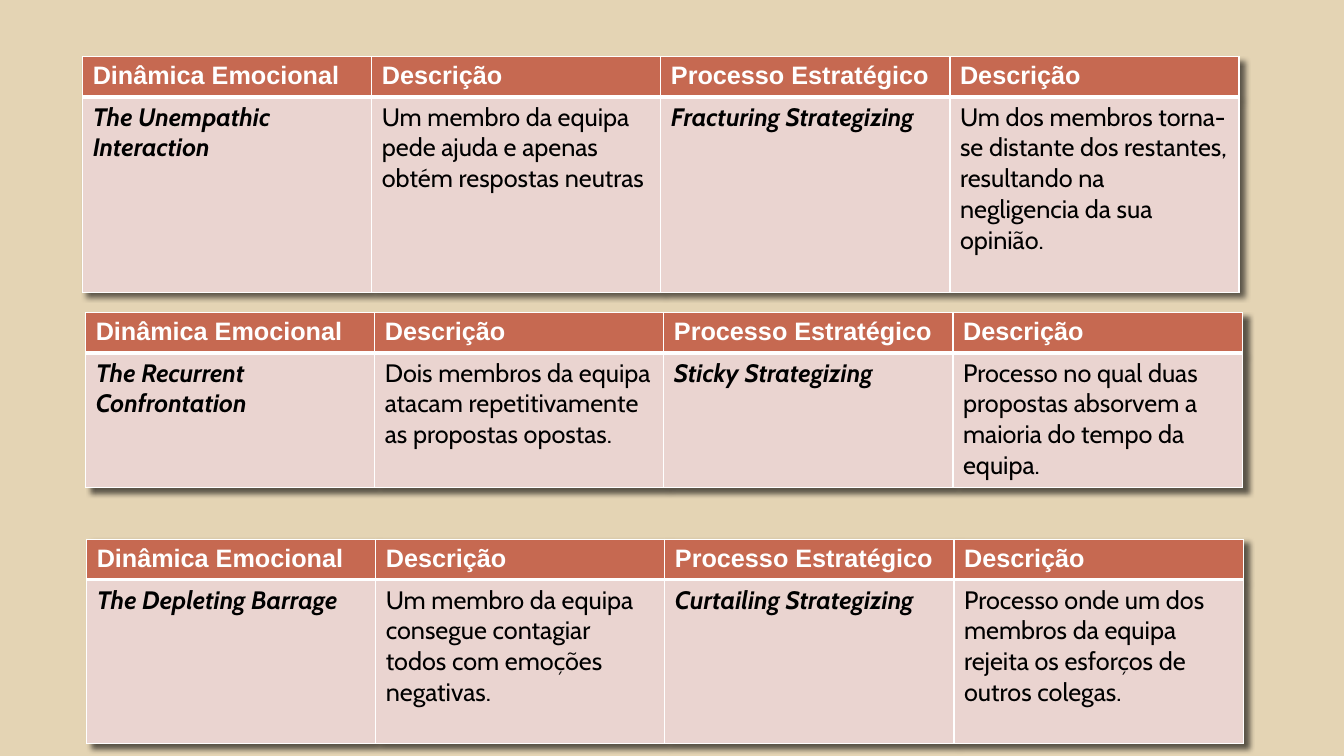
import pptx
import pptx.dml.color
import pptx.oxml
import pptx.oxml.ns
import pptx.util

Inches = pptx.util.Inches
Pt = pptx.util.Pt
RGBColor = pptx.dml.color.RGBColor

SAND = RGBColor(0xE4, 0xD4, 0xB4)
TERRACOTTA = RGBColor(0xC6, 0x69, 0x51)
BLUSH = RGBColor(0xEA, 0xD4, 0xD0)
WHITE = RGBColor(0xFF, 0xFF, 0xFF)
BLACK = RGBColor(0x00, 0x00, 0x00)

TABLE_WIDTH = 11.47
HEADER_HEIGHT = 0.4
THIN, THICK = 1, 3
NAMESPACE = pptx.oxml.ns.nsdecls("a")

HEADINGS = ["Dinâmica Emocional", "Descrição", "Processo Estratégico", "Descrição"]

# left, top, body height, body texts
DYNAMICS = [
    (0.86, 5.35, 1.63, [
        "The Depleting Barrage",
        "Um membro da equipa consegue contagiar todos com emoções negativas.",
        "Curtailing Strategizing",
        "Processo onde um dos membros da equipa rejeita os esforços de outros colegas.",
    ]),
    (0.85, 3.1, 1.34, [
        "The Recurrent Confrontation",
        "Dois membros da equipa atacam repetitivamente as propostas opostas.",
        "Sticky Strategizing",
        "Processo no qual duas propostas absorvem a maioria do tempo da equipa.",
    ]),
    (0.82, 0.56, 1.94, [
        "The Unempathic Interaction",
        "Um membro da equipa pede ajuda e apenas obtém respostas neutras",
        "Fracturing Strategizing",
        "Um dos membros torna-se distante dos restantes, resultando na "
        "negligencia da sua opinião.",
    ]),
]


def set_borders(cell, top, bottom):
    properties = cell._tc.get_or_add_tcPr()
    for side, width in (("L", THIN), ("R", THIN), ("T", top), ("B", bottom)):
        properties.append(pptx.oxml.parse_xml(
            f'<a:ln{side} {NAMESPACE} w="{Pt(width)}"><a:solidFill>'
            f'<a:srgbClr val="{WHITE}"/></a:solidFill></a:ln{side}>'))


def add_shadow(table):
    table._tbl.tblPr.insert(0, pptx.oxml.parse_xml(
        f'<a:effectLst {NAMESPACE}><a:outerShdw blurRad="{Pt(4)}" dist="{Pt(4)}" '
        'dir="2700000" algn="tl" rotWithShape="0"><a:srgbClr val="000000">'
        '<a:alpha val="60000"/></a:srgbClr></a:outerShdw></a:effectLst>'))


def fill_cell(cell, text, fill, font_name, color, bold, italic):
    cell.fill.solid()
    cell.fill.fore_color.rgb = fill
    cell.text_frame.text = text
    font = cell.text_frame.paragraphs[0].runs[0].font
    font.name = font_name
    font.size = Pt(18)
    font.color.rgb = color
    font.bold = bold
    font.italic = italic


def add_dynamic_table(slide, left, top, body_height, texts):
    """Add one emotional dynamic: a heading row above a row of names and descriptions."""
    frame = slide.shapes.add_table(
        2, len(HEADINGS), Inches(left), Inches(top),
        Inches(TABLE_WIDTH), Inches(HEADER_HEIGHT + body_height))
    table = frame.table
    table.horz_banding = False
    table.rows[0].height = Inches(HEADER_HEIGHT)
    table.rows[1].height = Inches(body_height)
    add_shadow(table)
    for column, (heading, text) in enumerate(zip(HEADINGS, texts)):
        header, body = table.cell(0, column), table.cell(1, column)
        set_borders(header, THIN, THICK)
        set_borders(body, THICK, THIN)
        is_name = column % 2 == 0
        fill_cell(header, heading, TERRACOTTA, "Arial", WHITE, True, False)
        fill_cell(body, text, BLUSH, "Cabin", BLACK, is_name, is_name)


def main():
    presentation = pptx.Presentation()
    presentation.slide_width = Inches(13.33)
    presentation.slide_height = Inches(7.5)
    slide = presentation.slides.add_slide(presentation.slide_layouts[6])
    slide.background.fill.solid()
    slide.background.fill.fore_color.rgb = SAND
    for left, top, body_height, texts in DYNAMICS:
        add_dynamic_table(slide, left, top, body_height, texts)
    presentation.save("out.pptx")


if __name__ == "__main__":
    main()
